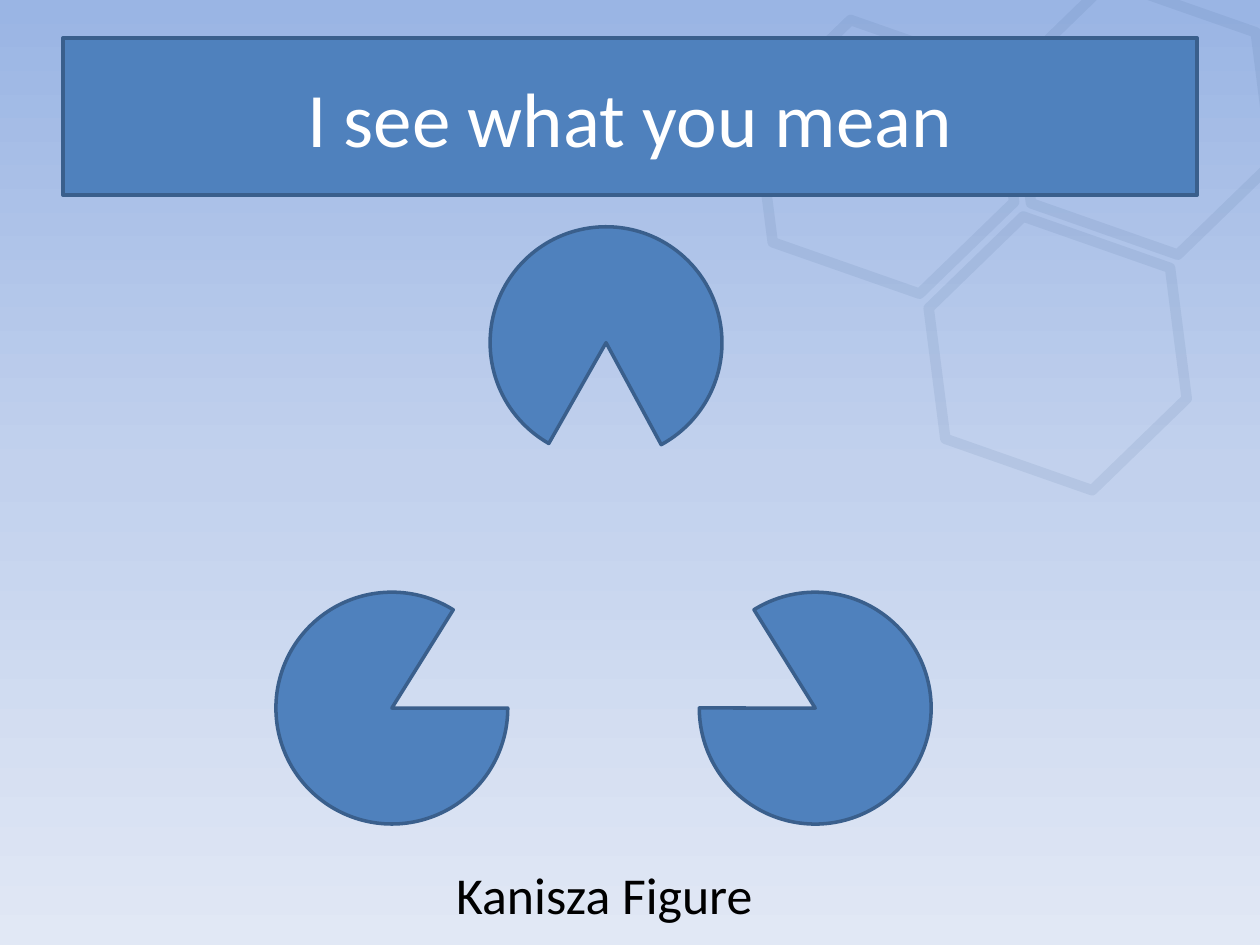
import copy

import pptx
import pptx.dml.color
import pptx.enum.shapes
import pptx.enum.text
import pptx.oxml.ns
import pptx.oxml.xmlchemy
import pptx.util

INK = {"fill": "4F81BD", "edge": "3A5F8C", "text": "000000", "title": "FFFFFF"}
SKY = {0: "9AB5E4", 0.5: "C2D1ED", 1: "E1E8F5"}
KIND = pptx.enum.shapes.MSO_SHAPE
TEXT = pptx.enum.text
inch = pptx.util.Inches
qn = pptx.oxml.ns.qn
node = pptx.oxml.xmlchemy.OxmlElement


def rgb(code):
    return pptx.dml.color.RGBColor.from_string(code)


def write(box, words, size, color):
    run = box.text_frame.paragraphs[0].add_run()
    run.text = words
    run.font.name = "Calibri"
    run.font.size = pptx.util.Pt(size)
    run.font.color.rgb = rgb(color)


deck = pptx.Presentation()
deck.slide_width, deck.slide_height = inch(10), inch(7.5)
slide = deck.slides.add_slide(deck.slide_layouts[1])
title, body = slide.shapes.title, slide.placeholders[1]

# Sky: three stops from top to bottom
sky = slide.background.fill
sky.gradient()
sky.gradient_angle = 270
stops = slide.element.find(".//" + qn("a:gsLst"))
stops.append(copy.deepcopy(stops[0]))
for stop, (place, color) in zip(sky.gradient_stops, SKY.items()):
    stop.position = place
    stop.color.rgb = rgb(color)

# Caption
body.left, body.top, body.width, body.height = map(inch, (3.52, 6.8, 2.66, 0.55))
body.text_frame.auto_size = TEXT.MSO_AUTO_SIZE.NONE
line = body.text_frame.paragraphs[0]
line.space_before = pptx.util.Pt(0)
props = line._p.get_or_add_pPr()
props.set("marL", "0")
props.set("indent", "0")
props.append(node("a:buNone"))
write(body, "Kanisza Figure", 29.6, INK["text"])

# Faint honeycomb
comb = slide.shapes.add_group_shape()
for left, top in ((5.94, 0.31), (7.31, 1.87), (7.99, 0)):
    cell = comb.shapes.add_shape(KIND.HEXAGON, inch(left), inch(top), inch(2.17), inch(1.87))
    cell.rotation = 19.3
    cell.shadow.inherit = False
    cell.fill.background()
    cell.line.width = pptx.util.Pt(6)
    cell.line.color.rgb = rgb(INK["edge"])
    alpha = node("a:alpha")
    alpha.set("val", "10000")
    cell.line._ln.find(".//" + qn("a:srgbClr")).append(alpha)
    cell.line._ln.append(node("a:round"))

# Three cut discs, each mouth turned to the middle of the triangle
discs = slide.shapes.add_group_shape()
for left, top, turn in ((2.19, 4.7, 0), (5.55, 4.7, 238.1), (3.89, 1.8, 119.6)):
    disc = discs.shapes.add_shape(KIND.PIE, inch(left), inch(top), inch(1.84), inch(1.84))
    disc.adjustments[0] = 0
    disc.adjustments[1] = 302 * 0.6  # end angle in degrees
    disc.rotation = turn
    disc.shadow.inherit = False
    disc.fill.solid()
    disc.fill.fore_color.rgb = rgb(INK["fill"])
    disc.line.color.rgb = rgb(INK["edge"])
    disc.line.width = pptx.util.Pt(2)

# Title bar, in front of the honeycomb
slide.shapes._spTree.append(title._element)
title.left, title.top, title.width, title.height = map(inch, (0.5, 0.3, 9, 1.25))
title.fill.solid()
title.fill.fore_color.rgb = rgb(INK["fill"])
title.line.color.rgb = rgb(INK["edge"])
title.line.width = pptx.util.Pt(2)
title.text_frame.vertical_anchor = TEXT.MSO_ANCHOR.MIDDLE
title.text_frame.paragraphs[0].alignment = TEXT.PP_ALIGN.CENTER
write(title, "I see what you mean", 44, INK["title"])

deck.save("out.pptx")
